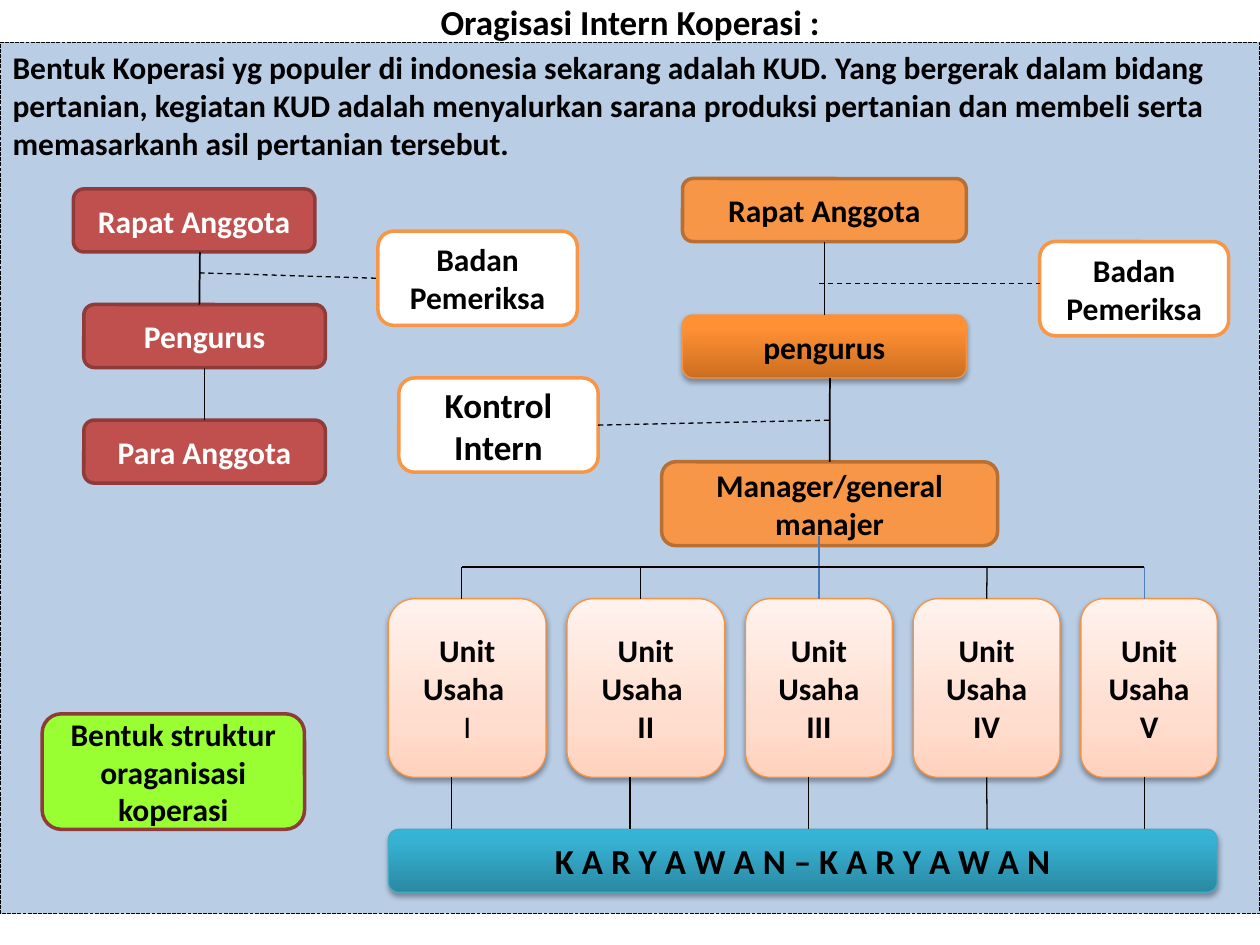
import lxml.etree
import pptx
import pptx.dml.color
import pptx.enum.dml
import pptx.enum.shapes
import pptx.enum.text
import pptx.oxml
import pptx.oxml.ns
import pptx.util

Cm, Pt = pptx.util.Cm, pptx.util.Pt
DASH = pptx.enum.dml.MSO_LINE
ALIGN = pptx.enum.text.PP_ALIGN
ANCHOR = pptx.enum.text.MSO_ANCHOR
TOP, LEFT, BOTTOM, RIGHT = range(4)

COLORS = {
    "black": "000000", "white": "FFFFFF", "panel": "B9CDE5",
    "red": "C0504D", "dark red": "8E3B39", "orange": "F79646",
    "dark orange": "B76F34", "orange edge": "F69240", "teal edge": "46AAC5",
    "green": "99FF33", "blue": "4B7EBC",
}
GRADIENTS = {
    "orange": [(0, "CC6E20"), (80, "FF9034"), (100, "FF9136")],
    "teal": [(0, "2A88A2"), (80, "37B1D2"), (100, "34B4D6")],
    "peach": [(0, "FFD2BD"), (35, "FFDED0"), (100, "FFF2ED")],
}
STYLES = {
    "member": {"fill": "red", "line": "dark red", "font": "white"},
    "office": {"fill": "orange", "line": "dark orange"},
    "side": {"fill": "white", "line": "orange"},
    "caption": {"fill": "green", "line": "dark red"},
    "board": {"gradient": "orange", "line": "orange edge"},
    "staff": {"gradient": "teal", "line": "teal edge"},
    "unit": {"gradient": "peach", "line": "orange edge"},
}

TITLE = "Oragisasi Intern Koperasi :"
INTRO = ("Bentuk Koperasi yg populer di indonesia sekarang adalah KUD. Yang bergerak "
         "dalam bidang pertanian, kegiatan KUD adalah menyalurkan sarana produksi "
         "pertanian dan membeli serta memasarkanh asil pertanian tersebut.")

# key: (text, style, left, top, width, height, text size), lengths in cm
BOXES = {
    "members": ("Rapat Anggota", "member", 1.48, 3.81, 4.87, 1.27, 18),
    "auditor": ("Badan Pemeriksa", "side", 7.62, 4.66, 4.02, 1.9, 18),
    "all members": ("Para Anggota", "member", 1.69, 8.47, 4.87, 1.27, 18),
    "officers": ("Pengurus", "member", 1.69, 6.14, 4.87, 1.27, 18),
    "meeting": ("Rapat Anggota", "office", 13.76, 3.6, 5.72, 1.27, 18),
    "inspector": ("Badan Pemeriksa", "side", 20.96, 4.87, 3.81, 1.9, 18),
    "board": ("pengurus", "board", 13.76, 6.35, 5.72, 1.27, 18),
    "manager": ("Manager/general manajer", "office", 13.34, 9.31, 6.77, 1.69, 18),
    "staff": ("K A R Y A W A N – K A R Y A W A N", "staff",
              7.83, 16.72, 16.71, 1.27, 20),
    "control": ("Kontrol Intern", "side", 8.04, 7.62, 4.02, 1.9, 20),
    "caption": ("Bentuk struktur oraganisasi koperasi", "caption",
                0.85, 14.39, 5.29, 2.33, 18),
}
UNITS = [("Unit Usaha \nI", 3.18), ("Unit Usaha \nII", 3.18), ("Unit Usaha III", 2.96),
         ("Unit Usaha IV", 2.96), ("Unit Usaha V", 2.75)]
UNIT_LEFT, UNIT_TOP, UNIT_HEIGHT, UNIT_GAP = 7.83, 12.07, 3.6, 0.42
UNIT_BOTTOM, STAFF_TOP, BUS_Y = UNIT_TOP + UNIT_HEIGHT, 16.72, 11.43

# An end is a point (x, y) in cm or a box key with a side.
LINES = [
    ((4.03, 5.08), (4.02, 6.14), "black", 1, False),
    (("officers", BOTTOM), ("all members", TOP), "black", 0.75, False),
    ((4.02, 5.5), ("auditor", LEFT), "black", 0.75, True),
    (("meeting", BOTTOM), ("board", TOP), "black", 1, False),
    ((16.51, 5.72), (20.96, 5.72), "black", 0.75, True),
    (("control", RIGHT), (16.72, 8.47), "black", 0.75, True),
    ((16.73, 7.62), ("manager", TOP), "black", 1, False),
    ((16.51, 10.8), ("unit 3", TOP), "blue", 0.75, False),
    ((9.31, BUS_Y), (23.07, BUS_Y), "black", 1, False),
    ((19.9, BUS_Y), ("unit 4", TOP), "black", 0.75, False),
    (("unit 4", BOTTOM), (19.9, STAFF_TOP), "black", 0.75, False),
]
LINES += [((x, BUS_Y), (x, UNIT_TOP), color, 0.75, False)
          for x, color in [(9.31, "black"), (12.91, "black"), (23.07, "blue")]]
LINES += [((x, UNIT_BOTTOM), (x, STAFF_TOP), "black", 0.75, False)
          for x in (9.1, 12.7, 16.3, 23.07)]


def apply(target, values):
    for name, value in values.items():
        setattr(target, name, value)


def rgb(name):
    return pptx.dml.color.RGBColor.from_string(COLORS[name])


def place(shape, left, top, width, height):
    apply(shape, {"left": Cm(left), "top": Cm(top),
                  "width": Cm(width), "height": Cm(height)})


def write(shape, text, size, color="black", align=ALIGN.CENTER, anchor=ANCHOR.MIDDLE):
    frame = shape.text_frame
    frame.text = text
    apply(frame, {"word_wrap": True, "vertical_anchor": anchor,
                  "auto_size": pptx.enum.text.MSO_AUTO_SIZE.NONE})
    for paragraph in frame.paragraphs:
        paragraph.alignment = align
        for run in paragraph.runs:
            apply(run.font, {"name": "Calibri", "size": Pt(size), "bold": True})
            run.font.color.rgb = rgb(color)


def paint(shape, color):
    shape.fill.solid()
    shape.fill.fore_color.rgb = rgb(color)


def outline(shape, color, width, dash=None):
    shape.line.color.rgb = rgb(color)
    apply(shape.line, {"width": Pt(width), "dash_style": dash})


def add_glow_fill(shape, stops):
    """Fill from bottom to top with the stops and add a soft shadow below."""
    namespace = pptx.oxml.ns.nsdecls("a")
    stop_xml = "".join(f'<a:gs pos="{position * 1000}"><a:srgbClr val="{color}"/></a:gs>'
                       for position, color in stops)
    shape.fill.background()
    empty_fill = shape._element.spPr.find(pptx.oxml.ns.qn("a:noFill"))
    empty_fill.getparent().replace(empty_fill, pptx.oxml.parse_xml(
        f'<a:gradFill {namespace} rotWithShape="1"><a:gsLst>{stop_xml}</a:gsLst>'
        '<a:lin ang="16200000" scaled="0"/></a:gradFill>'))
    effects = shape._element.spPr.find(pptx.oxml.ns.qn("a:effectLst"))
    effects.append(pptx.oxml.parse_xml(
        f'<a:outerShdw {namespace} blurRad="{Pt(3.1)}" dist="{Pt(1.8)}" dir="5400000" '
        'rotWithShape="0"><a:srgbClr val="000000"><a:alpha val="35000"/></a:srgbClr>'
        '</a:outerShdw>'))


def add_box(slide, text, style_name, left, top, width, height, size):
    style = STYLES[style_name]
    shape = slide.shapes.add_shape(pptx.enum.shapes.MSO_SHAPE.ROUNDED_RECTANGLE,
                                   Cm(left), Cm(top), Cm(width), Cm(height))
    shape.shadow.inherit = False
    if "gradient" in style:
        outline(shape, style["line"], 0.75)
        add_glow_fill(shape, GRADIENTS[style["gradient"]])
    else:
        outline(shape, style["line"], 2)
        paint(shape, style["fill"])
    write(shape, text, size, style.get("font", "black"))
    return shape


def add_line(slide, boxes, start, end, color, width, dashed):
    points = [(0, 0) if point[0] in boxes else point for point in (start, end)]
    connector = slide.shapes.add_connector(
        pptx.enum.shapes.MSO_CONNECTOR.STRAIGHT,
        *(Cm(value) for point in points for value in point))
    for point, connect in ((start, connector.begin_connect), (end, connector.end_connect)):
        if point[0] in boxes:
            connect(boxes[point[0]], point[1])
    outline(connector, color, width, DASH.DASH if dashed else None)
    lxml.etree.SubElement(connector._element.spPr, pptx.oxml.ns.qn("a:effectLst"))


def main():
    presentation = pptx.Presentation()
    apply(presentation, {"slide_width": Cm(25.4), "slide_height": Cm(19.05)})
    slide = presentation.slides.add_slide(presentation.slide_layouts[0])

    title, intro = slide.placeholders
    place(title, 0.64, 0, 24.13, 0.85)
    write(title, TITLE, 20)
    place(intro, 0, 0.85, 25.4, 17.57)
    paint(intro, "panel")
    outline(intro, "black", 0.75, DASH.SQUARE_DOT)
    write(intro, INTRO, 18, align=ALIGN.LEFT, anchor=ANCHOR.TOP)

    boxes = {key: add_box(slide, *box) for key, box in BOXES.items()}
    left = UNIT_LEFT
    for number, (text, width) in enumerate(UNITS, 1):
        boxes[f"unit {number}"] = add_box(slide, text, "unit", left, UNIT_TOP,
                                          width, UNIT_HEIGHT, 18)
        left += width + UNIT_GAP
    boxes["unit 1"].text_frame.paragraphs[1].runs[0].font.bold = False

    for line in LINES:
        add_line(slide, boxes, *line)
    presentation.save("out.pptx")


if __name__ == "__main__":
    main()
